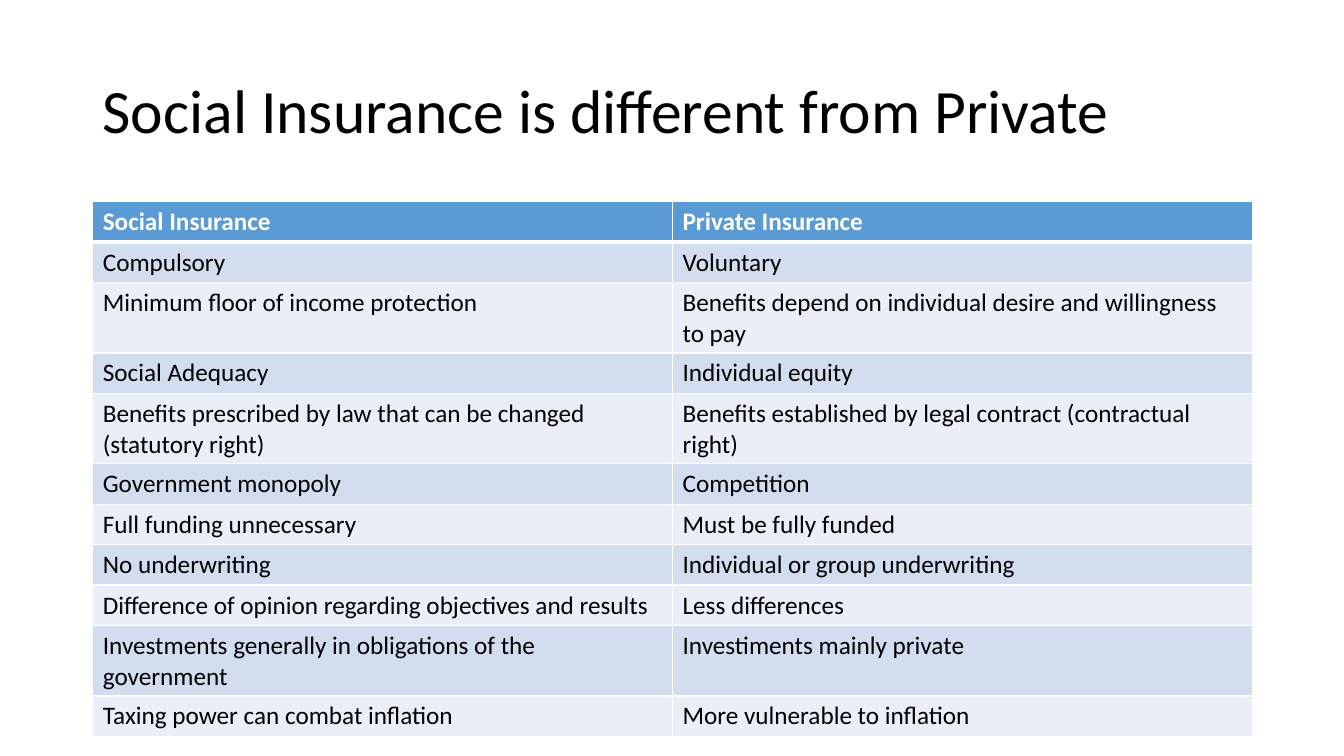
from typing import NamedTuple

from lxml.etree import SubElement
from pptx import Presentation
from pptx.dml.color import RGBColor
from pptx.enum.text import MSO_ANCHOR
from pptx.oxml.ns import qn
from pptx.slide import Slide
from pptx.table import _Cell as Cell
from pptx.text.text import TextFrame
from pptx.util import Inches, Pt

BLACK = RGBColor(0x00, 0x00, 0x00)
WHITE = RGBColor(0xFF, 0xFF, 0xFF)
BLUE = RGBColor(0x5B, 0x9B, 0xD5)
PALE = RGBColor(0xD2, 0xDE, 0xEF)
FAINT = RGBColor(0xEA, 0xEF, 0xF7)

FONT = "Calibri"
LEFT, WIDTH = 0.92, 11.5
ROW_HEIGHT = 0.4


class Pair(NamedTuple):
    social: str
    private: str


class Look(NamedTuple):
    fill: RGBColor
    color: RGBColor = BLACK
    bold: bool = False
    bottom: int = 1


HEAD = Look(BLUE, WHITE, bold=True, bottom=3)
BANDS = (Look(FAINT), Look(PALE))

PAIRS = [
    Pair("Social Insurance", "Private Insurance"),
    Pair("Compulsory", "Voluntary"),
    Pair("Minimum floor of income protection",
         "Benefits depend on individual desire and willingness to pay"),
    Pair("Social Adequacy", "Individual equity"),
    Pair("Benefits prescribed by law that can be changed (statutory right)",
         "Benefits established by legal contract (contractual right)"),
    Pair("Government monopoly", "Competition"),
    Pair("Full funding unnecessary", "Must be fully funded"),
    Pair("No underwriting", "Individual or group underwriting"),
    Pair("Difference of opinion regarding objectives and results", "Less differences"),
    Pair("Investments generally in obligations of the government",
         "Investiments mainly private"),
    Pair("Taxing power can combat inflation", "More vulnerable to inflation"),
]


def write(frame: TextFrame, text: str, size: int, color: RGBColor, bold: bool = False) -> None:
    frame.text = text
    font = frame.paragraphs[0].runs[0].font
    font.name, font.size, font.bold = FONT, Pt(size), bold
    font.color.rgb = color


def edge(cell: Cell, side: str, points: int) -> None:
    """Draw a white border on one side: L, R, T or B."""
    line = SubElement(cell._tc.get_or_add_tcPr(), qn(f"a:ln{side}"), w=str(Pt(points)))
    fill = SubElement(line, qn("a:solidFill"))
    SubElement(fill, qn("a:srgbClr"), val=str(WHITE))


def style(cell: Cell, text: str, look: Look, top: int) -> None:
    for side, points in zip("LRTB", (1, 1, top, look.bottom)):
        edge(cell, side, points)
    cell.fill.solid()
    cell.fill.fore_color.rgb = look.fill
    write(cell.text_frame, text, 18, look.color, look.bold)


def add_title(slide: Slide, text: str) -> None:
    box = slide.shapes.add_textbox(Inches(LEFT), Inches(0.4), Inches(WIDTH), Inches(1.45))
    frame = box.text_frame
    frame.word_wrap = True
    frame.vertical_anchor = MSO_ANCHOR.MIDDLE
    write(frame, text, 44, BLACK)
    frame.paragraphs[0].line_spacing = 0.9


def add_grid(slide: Slide, pairs: list[Pair]) -> None:
    table = slide.shapes.add_table(
        len(pairs), len(Pair._fields), Inches(LEFT), Inches(2),
        Inches(WIDTH), Inches(ROW_HEIGHT * len(pairs)),
    ).table
    top = 1
    for row, pair in enumerate(pairs):
        look = BANDS[row % 2] if row else HEAD
        for col, text in enumerate(pair):
            style(table.cell(row, col), text, look, top)
        top = look.bottom


def main() -> None:
    deck = Presentation()
    deck.slide_width, deck.slide_height = Inches(13.33), Inches(7.5)
    slide = deck.slides.add_slide(deck.slide_layouts[6])
    add_title(slide, "Social Insurance is different from Private")
    add_grid(slide, PAIRS)
    deck.save("out.pptx")


if __name__ == "__main__":
    main()
